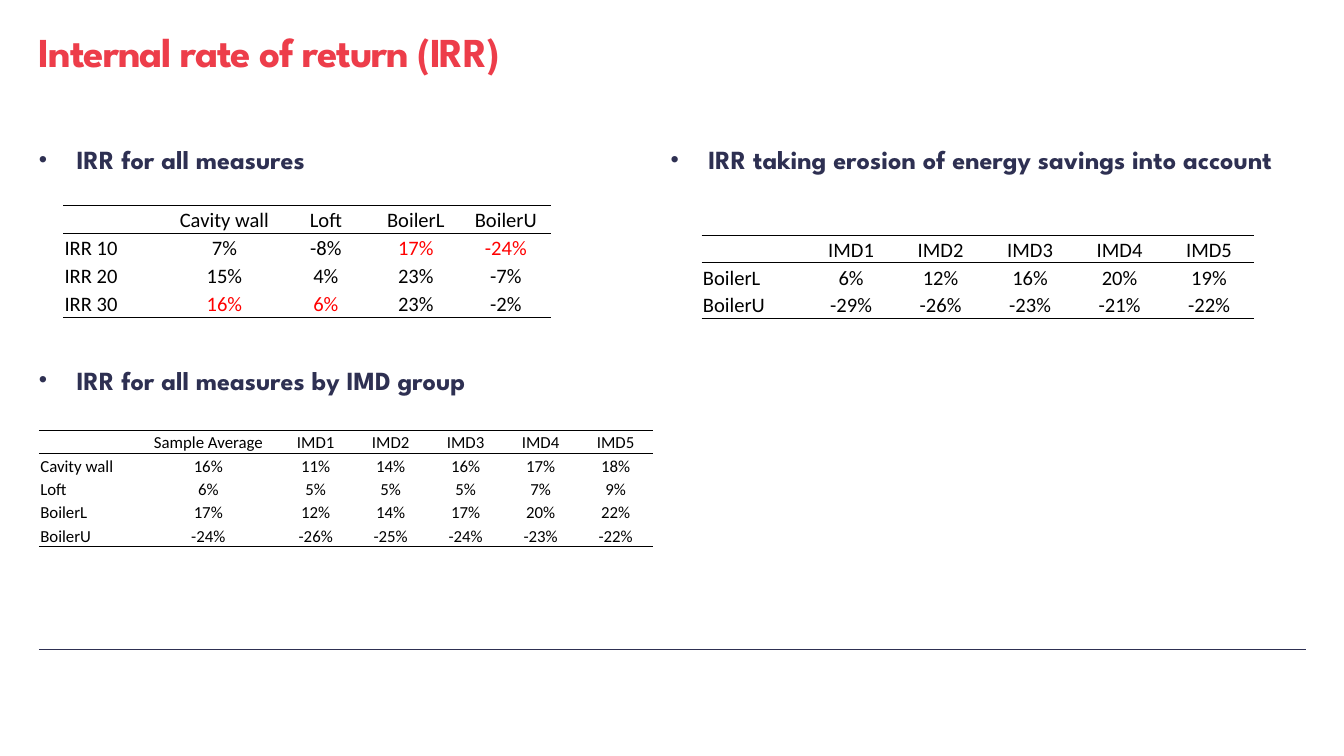
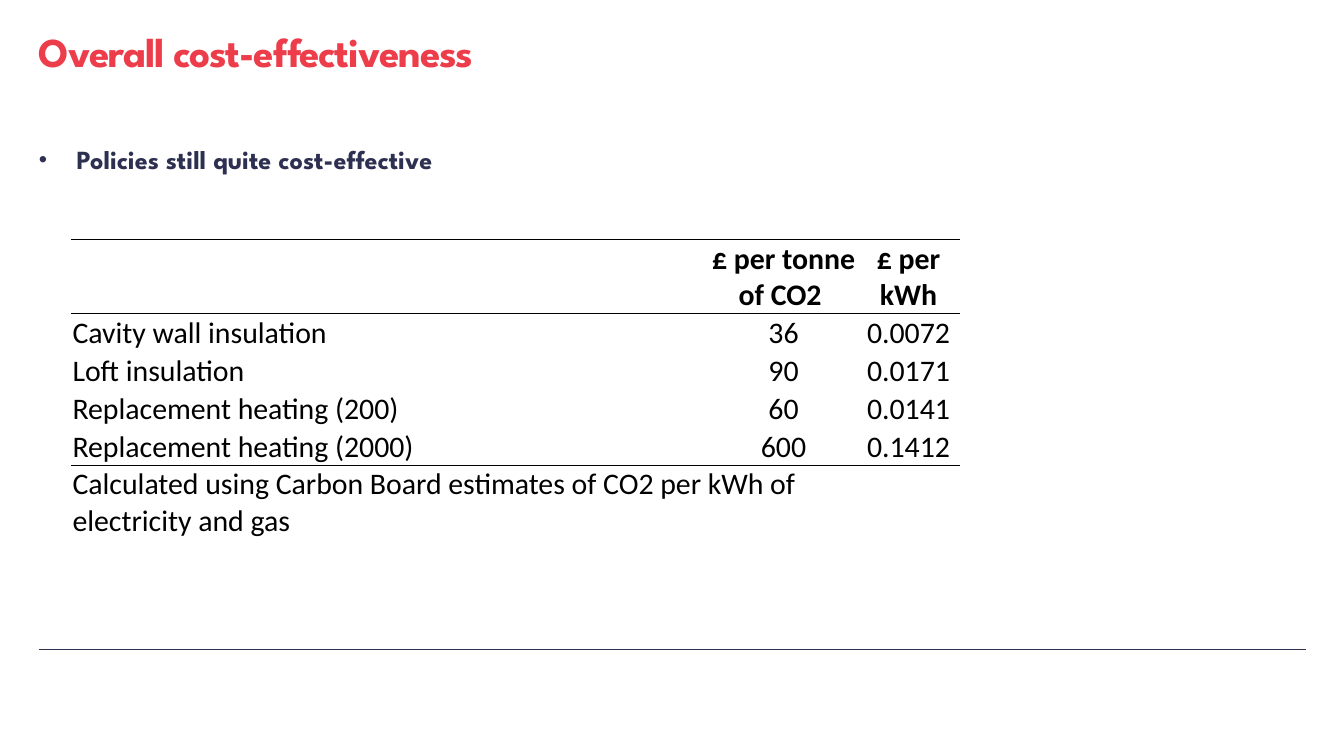
from dataclasses import dataclass

from lxml.etree import SubElement
from pptx import Presentation
from pptx.dml.color import RGBColor
from pptx.enum.shapes import MSO_CONNECTOR
from pptx.enum.text import MSO_ANCHOR, MSO_AUTO_SIZE, PP_ALIGN
from pptx.oxml.ns import qn
from pptx.util import Inches, Pt


@dataclass(frozen=True)
class Theme:
    heading_font: str = "League Spartan"
    table_font: str = "Calibri"
    title: str = "ED3D4A"
    navy: str = "2E3052"
    ink: str = "000000"
    highlight: str = "FF0000"
    title_size: int = 22
    bullet_size: int = 14
    table_size: int = 11
    small_table_size: int = 9
    large_table_size: int = 16
    rule_width: float = 0.5


THEME = Theme()
NO_STYLE_NO_GRID = "{2D5ABB26-0587-4C30-8999-92F81FD0307C}"
IMD_GROUPS = [f"IMD{n}" for n in range(1, 6)]
LEFT, RIGHT = 0.29, 4.99


def add_run(p, text, font, size, color, bold=False):
    r = p.add_run()
    r.text = text
    r.font.name = font
    r.font.size = Pt(size)
    r.font.bold = bold
    r.font.color.rgb = RGBColor.from_string(color)
    return r


def place_text(sp, box):
    """Move a placeholder to box and return its first paragraph, ready for text."""
    sp.left, sp.top, sp.width, sp.height = (Inches(v) for v in box)
    tf = sp.text_frame
    tf.word_wrap = True
    tf.auto_size = MSO_AUTO_SIZE.NONE
    tf.vertical_anchor = MSO_ANCHOR.TOP
    tf.margin_left = tf.margin_top = tf.margin_right = tf.margin_bottom = 0
    p = tf.paragraphs[0]
    p.alignment = PP_ALIGN.LEFT
    p.space_before = Pt(0)
    return p


def add_title(s, text):
    p = place_text(s.shapes.title, (LEFT, 0.2, 9, 0.41))
    r = add_run(p, text, THEME.heading_font, THEME.title_size, THEME.title, True)
    r.font._element.set("spc", "-60")


def add_bullet(sp, text, box):
    p = place_text(sp, box)
    p.space_after = Pt(1)
    pPr = p._p.get_or_add_pPr()
    pPr.set("marL", str(Inches(0.28)))
    pPr.set("indent", str(-Inches(0.28)))
    SubElement(SubElement(pPr, qn("a:buClr")), qn("a:srgbClr"), val=THEME.navy)
    SubElement(pPr, qn("a:buSzPct"), val="90000")
    SubElement(pPr, qn("a:buFont"), typeface="Arial")
    SubElement(pPr, qn("a:buChar"), char="•")
    add_run(p, text, THEME.heading_font, THEME.bullet_size, THEME.navy, True)


def rule_cell(cell, ruled_sides):
    """Draw thin lines on the ruled sides and switch the other sides off."""
    tcPr = cell._tc.get_or_add_tcPr()
    for i, side in enumerate("LRTB"):
        ln = SubElement(tcPr, qn(f"a:ln{side}"), w=str(Pt(THEME.rule_width)))
        if side in ruled_sides:
            fill = SubElement(ln, qn("a:solidFill"))
            SubElement(fill, qn("a:srgbClr"), val=THEME.ink)
        else:
            SubElement(ln, qn("a:noFill"))
        tcPr.insert(i, ln)


def fill_cell(cell, text, size, color, bold, align):
    cell.margin_left = cell.margin_right = cell.margin_top = Inches(0.01)
    cell.margin_bottom = 0
    cell.vertical_anchor = MSO_ANCHOR.BOTTOM
    cell.fill.background()
    p = cell.text_frame.paragraphs[0]
    p.alignment = align
    if text:
        add_run(p, text, THEME.table_font, size, color, bold)
    else:
        SubElement(p._p, qn("a:endParaRPr"), sz=str(size * 100))


def add_ruled_table(s, left, top, widths, heights, rows, size,
                    highlights=(), bold_header=False, note=None):
    """Table ruled above and below its header and below its last data row."""
    last = len(rows) - 1
    ruled = {0: "TB", 1: "T", last: "B", last + 1: "T"}
    if note:
        rows = rows + [[note] + [""] * (len(widths) - 1)]
    frame = s.shapes.add_table(len(rows), len(widths), Inches(left), Inches(top),
                               Inches(sum(widths)), Inches(sum(heights)))
    table = frame.table
    table.first_row = table.horz_banding = False
    table._tbl.tblPr.find(qn("a:tableStyleId")).text = NO_STYLE_NO_GRID
    for column, width in zip(table.columns, widths):
        column.width = Inches(width)
    for row, height in zip(table.rows, heights):
        row.height = Inches(height)
    for i, values in enumerate(rows):
        for j, text in enumerate(values):
            cell = table.cell(i, j)
            color = THEME.highlight if (i, j) in highlights else THEME.ink
            align = PP_ALIGN.CENTER if j else PP_ALIGN.LEFT
            fill_cell(cell, text, size, color, bold_header and i == 0, align)
            rule_cell(cell, ruled.get(i, ""))
    if note:
        table.cell(last + 1, 0).merge(table.cell(last + 1, 1))


def add_footer_rule(prs, s):
    """Draw the footer line and hand it to the master, so every slide shows it."""
    line = s.shapes.add_connector(MSO_CONNECTOR.STRAIGHT, Inches(LEFT), Inches(4.83),
                                  Inches(9.72), Inches(4.83))
    line.line.color.rgb = RGBColor.from_string(THEME.navy)
    line.line.width = Pt(THEME.rule_width)
    SubElement(line._element.spPr, qn("a:effectLst"))
    line._element.nvCxnSpPr.cNvPr.set("id", "100")
    prs.slide_master.shapes._spTree.append(line._element)


def all_measures(s, sp, left, top):
    add_bullet(sp, "IRR for all measures", (left, top, 4.57, 1.43))
    rows = [
        ["", "Cavity wall", "Loft", "BoilerL", "BoilerU"],
        ["IRR 10", "7%", "-8%", "17%", "-24%"],
        ["IRR 20", "15%", "4%", "23%", "-7%"],
        ["IRR 30", "16%", "6%", "23%", "-2%"],
    ]
    add_ruled_table(s, left + 0.18, top + 0.46, [0.78, 0.84] + [0.67] * 3,
                    [0.83 / 4] * 4, rows, THEME.table_size,
                    highlights={(1, 3), (1, 4), (3, 1), (3, 2)})


def measures_by_group(s, sp, left, top):
    add_bullet(sp, "IRR for all measures by IMD group", (left, top, 4.57, 1.43))
    rows = [
        ["", "Sample Average"] + IMD_GROUPS,
        ["Cavity wall", "16%", "11%", "14%", "16%", "17%", "18%"],
        ["Loft", "6%", "5%", "5%", "5%", "7%", "9%"],
        ["BoilerL", "17%", "12%", "14%", "17%", "20%", "22%"],
        ["BoilerU", "-24%", "-26%", "-25%", "-24%", "-23%", "-22%"],
    ]
    add_ruled_table(s, left, top + 0.49, [0.74, 1.04] + [2.79 / 5] * 5,
                    [0.87 / 5] * 5, rows, THEME.small_table_size)


def erosion_of_savings(s, sp, left, top):
    add_bullet(sp, "IRR taking erosion of energy savings into account",
               (left, top, 4.57, 1.43))
    rows = [
        [""] + IMD_GROUPS,
        ["BoilerL", "6%", "12%", "16%", "20%", "19%"],
        ["BoilerU", "-29%", "-26%", "-23%", "-21%", "-22%"],
    ]
    add_ruled_table(s, left + 0.23, top + 0.68, [0.78] + [3.33 / 5] * 5,
                    [0.62 / 3] * 3, rows, THEME.table_size)


def irr_slide(prs):
    s = prs.slides.add_slide(prs.slide_layouts.get_by_name("Comparison"))
    add_title(s, "Internal rate of return (IRR)")
    _, measures, by_group, erosion, spare = s.placeholders
    spare._element.getparent().remove(spare._element)
    all_measures(s, measures, LEFT, 1.07)
    measures_by_group(s, by_group, LEFT, 2.71)
    erosion_of_savings(s, erosion, RIGHT, 1.07)
    return s


def cost_slide(prs):
    s = prs.slides.add_slide(prs.slide_layouts.get_by_name("Title and Content"))
    add_title(s, "Overall cost-effectiveness")
    add_bullet(s.placeholders[1], "Policies still quite cost-effective",
               (LEFT, 1.07, 4.57, 3.49))
    rows = [
        ["", "£ per tonne of CO2 ", "£ per kWh"],
        ["Cavity wall insulation", "36", "0.0072"],
        ["Loft insulation", "90", "0.0171"],
        ["Replacement heating (200)", "60", "0.0141"],
        ["Replacement heating (2000)", "600", "0.1412"],
    ]
    add_ruled_table(s, LEFT + 0.24, 1.78, [4.75, 1.1, 0.76], [0.47] + [0.24] * 5,
                    rows, THEME.large_table_size, bold_header=True,
                    note="Calculated using Carbon Board estimates of CO2 per kWh "
                         "of electricity and gas")


def main():
    prs = Presentation()
    prs.slide_width = Inches(10)
    prs.slide_height = prs.slide_width * 9 // 16
    add_footer_rule(prs, irr_slide(prs))
    cost_slide(prs)
    prs.save("out.pptx")


if __name__ == "__main__":
    main()
